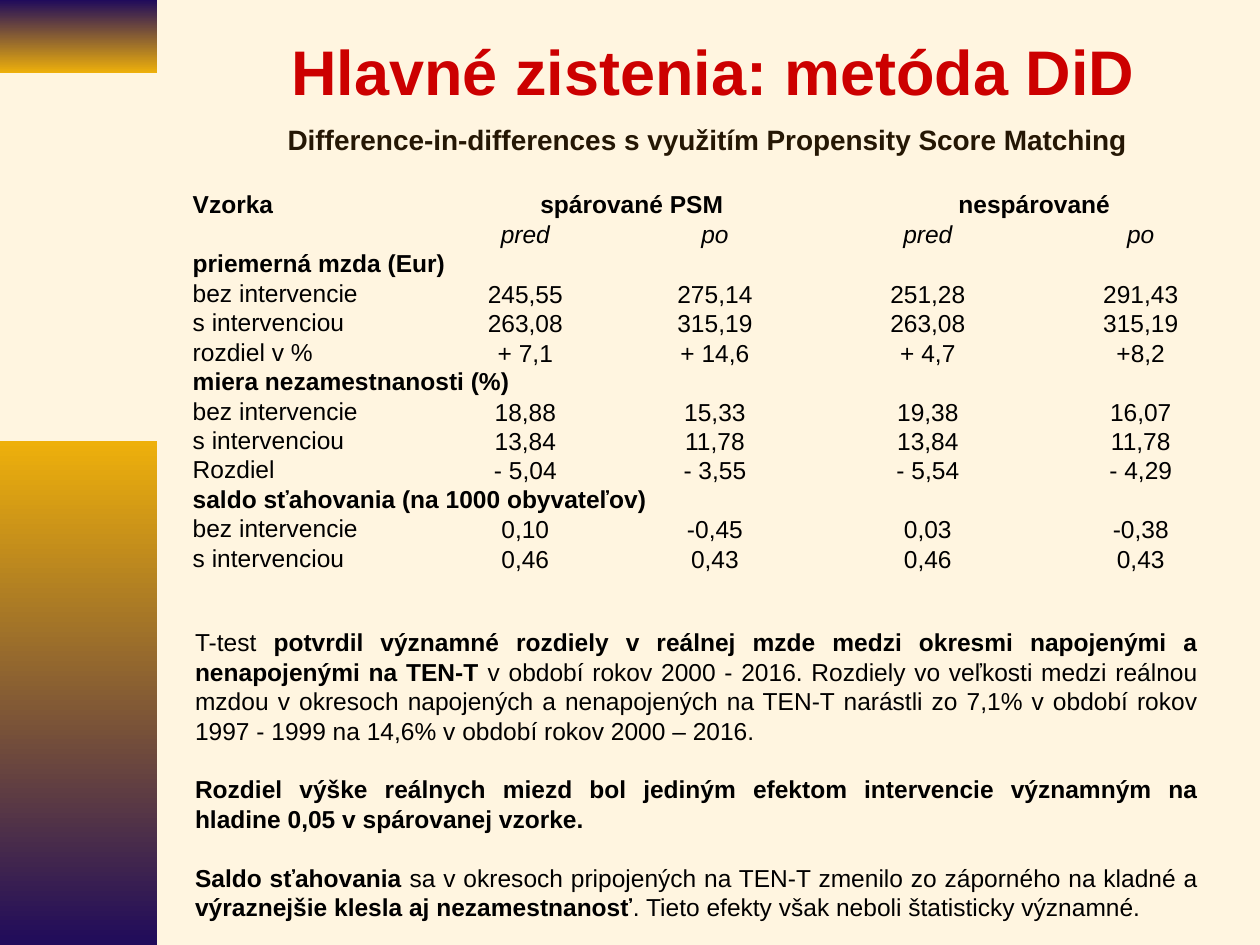
from dataclasses import dataclass

from lxml.etree import SubElement
from pptx import Presentation
from pptx.dml.color import RGBColor
from pptx.enum.shapes import MSO_SHAPE
from pptx.enum.text import MSO_ANCHOR, PP_ALIGN
from pptx.oxml.ns import qn
from pptx.util import Inches, Pt


@dataclass(frozen=True)
class Theme:
    font: str = "Arial"
    background: str = "FFF5E0"
    title: str = "CC0000"
    subtitle: str = "251704"
    text: str = "000000"
    violet: str = "200B5B"
    gold: str = "EEB00B"
    title_size: int = 36
    subtitle_size: int = 16
    body_size: int = 14
    paragraph_gap: float = 16.8


THEME = Theme()


def write_text(frame, paragraphs, size=THEME.body_size, color=THEME.text,
               italic=False, align=PP_ALIGN.CENTER, gap=0):
    for index, runs in enumerate(paragraphs):
        paragraph = frame.paragraphs[0] if index == 0 else frame.add_paragraph()
        paragraph.alignment = align
        if index and gap:
            paragraph.space_before = Pt(gap)
        for text, bold in runs:
            run = paragraph.add_run()
            run.text = text
            font = run.font
            font.name = THEME.font
            font.size = Pt(size)
            font.bold = bold
            font.italic = italic
            font.color.rgb = RGBColor.from_string(color)


class SlideBuilder:
    def __init__(self, slide, theme):
        self.slide = slide
        self.theme = theme
        fill = slide.background.fill
        fill.solid()
        fill.fore_color.rgb = RGBColor.from_string(theme.background)

    def gradient_bar(self, top, height, colors):
        shape = self.slide.shapes.add_shape(
            MSO_SHAPE.RECTANGLE, 0, Inches(top), Inches(1.25), Inches(height))
        shape.shadow.inherit = False
        shape.line.fill.background()
        shape.fill.gradient()
        shape.fill.gradient_angle = 270
        for stop, position, color in zip(shape.fill.gradient_stops, (0, 1), colors):
            stop.position = position
            stop.color.rgb = RGBColor.from_string(color)

    def text_box(self, left, top, width, height, paragraphs,
                 anchor=MSO_ANCHOR.TOP, **text_format):
        shape = self.slide.shapes.add_textbox(
            Inches(left), Inches(top), Inches(width), Inches(height))
        frame = shape.text_frame
        frame.word_wrap = True
        frame.vertical_anchor = anchor
        write_text(frame, paragraphs, **text_format)

    def table(self, left, top, height, widths, rows, merges):
        shape = self.slide.shapes.add_table(
            len(rows), len(widths), Inches(left), Inches(top),
            Inches(sum(widths)), Inches(height))
        table = shape.table
        table.first_row = False
        table.horz_banding = False
        for column, width in zip(table.columns, widths):
            column.width = Inches(width)
        for row in table.rows:
            row.height = Inches(height / len(rows))
        for cell in table.iter_cells():
            self.plain_cell(cell)
        for first, last in merges:
            table.cell(*first).merge(table.cell(*last))
        for row_index, values in enumerate(rows):
            section = len(values) == 1
            for column_index, value in enumerate(values):
                if not value:
                    continue
                cell = table.cell(row_index, column_index)
                if column_index and row_index > 2:
                    cell.vertical_anchor = MSO_ANCHOR.MIDDLE
                label_align = PP_ALIGN.LEFT if section else PP_ALIGN.JUSTIFY
                write_text(cell.text_frame, [[(value, section or row_index == 0)]],
                           italic=row_index == 1,
                           align=PP_ALIGN.CENTER if column_index else label_align)

    def plain_cell(self, cell):
        cell.margin_left = cell.margin_right = Inches(0.07)
        cell.margin_top = cell.margin_bottom = 0
        properties = cell._tc.get_or_add_tcPr()
        for side in ("lnL", "lnR", "lnT", "lnB"):
            border = SubElement(properties, qn(f"a:{side}"), w="0")
            SubElement(border, qn("a:noFill"))
        cell.fill.background()


ROWS = [
    ["Vzorka", "spárované PSM", "", "nespárované", ""],
    ["", "pred", "po", "pred", "po"],
    ["priemerná mzda (Eur)"],
    ["bez intervencie", "245,55", "275,14", "251,28", "291,43"],
    ["s intervenciou", "263,08", "315,19", "263,08", "315,19"],
    ["rozdiel v %", "+ 7,1", "+ 14,6", "+ 4,7", "+8,2"],
    ["miera nezamestnanosti (%)"],
    ["bez intervencie", "18,88", "15,33", "19,38", "16,07"],
    ["s intervenciou", "13,84", "11,78", "13,84", "11,78"],
    ["Rozdiel", "- 5,04", "- 3,55", "- 5,54", "- 4,29"],
    ["saldo sťahovania (na 1000 obyvateľov)"],
    ["bez intervencie", "0,10", "-0,45", "0,03", "-0,38"],
    ["s intervenciou", "0,46", "0,43", "0,46", "0,43"],
]

FINDINGS = [
    [("T-test ", False),
     ("potvrdil významné rozdiely v reálnej mzde medzi okresmi napojenými "
      "a nenapojenými na TEN-T", True),
     (" v období rokov 2000 - 2016. Rozdiely vo veľkosti medzi reálnou mzdou "
      "v okresoch napojených a nenapojených na TEN-T narástli zo 7,1% "
      "v období rokov 1997 - 1999 na 14,6% v období rokov 2000 – 2016.", False)],
    [("Rozdiel výške reálnych miezd bol jediným efektom intervencie významným "
      "na hladine 0,05 v spárovanej vzorke.", True)],
    [("Saldo sťahovania ", True),
     ("sa v okresoch pripojených na TEN-T zmenilo zo záporného na kladné a ", False),
     ("výraznejšie klesla aj nezamestnanosť", True),
     (". Tieto efekty však neboli štatisticky významné.", False)],
]


def main():
    presentation = Presentation()
    presentation.slide_width = Inches(10)
    presentation.slide_height = Inches(7.5)
    slide = presentation.slides.add_slide(presentation.slide_layouts[6])
    builder = SlideBuilder(slide, THEME)

    builder.gradient_bar(0, 0.58, (THEME.violet, THEME.gold))
    builder.gradient_bar(3.5, 4, (THEME.gold, THEME.violet))
    builder.text_box(1.66, 0.14, 8, 0.83, [[("Hlavné zistenia: metóda DiD", True)]],
                     anchor=MSO_ANCHOR.MIDDLE, size=THEME.title_size, color=THEME.title)
    builder.text_box(
        1.6, 0.92, 8.03, 0.37,
        [[("Difference-in-differences s využitím Propensity Score Matching", True)]],
        size=THEME.subtitle_size, color=THEME.subtitle)

    section_merges = [((index, 0), (index, 4))
                      for index, values in enumerate(ROWS) if len(values) == 1]
    header_merges = [((0, 0), (1, 0)), ((0, 1), (0, 2)), ((0, 3), (0, 4))]
    builder.table(1.46, 1.52, 3.03, [2.05, 1.32, 1.69, 1.69, 1.69], ROWS,
                  header_merges + section_merges)
    builder.text_box(1.45, 4.93, 8.16, 2.46, FINDINGS,
                     align=PP_ALIGN.JUSTIFY, gap=THEME.paragraph_gap)

    presentation.save("out.pptx")


if __name__ == "__main__":
    main()
